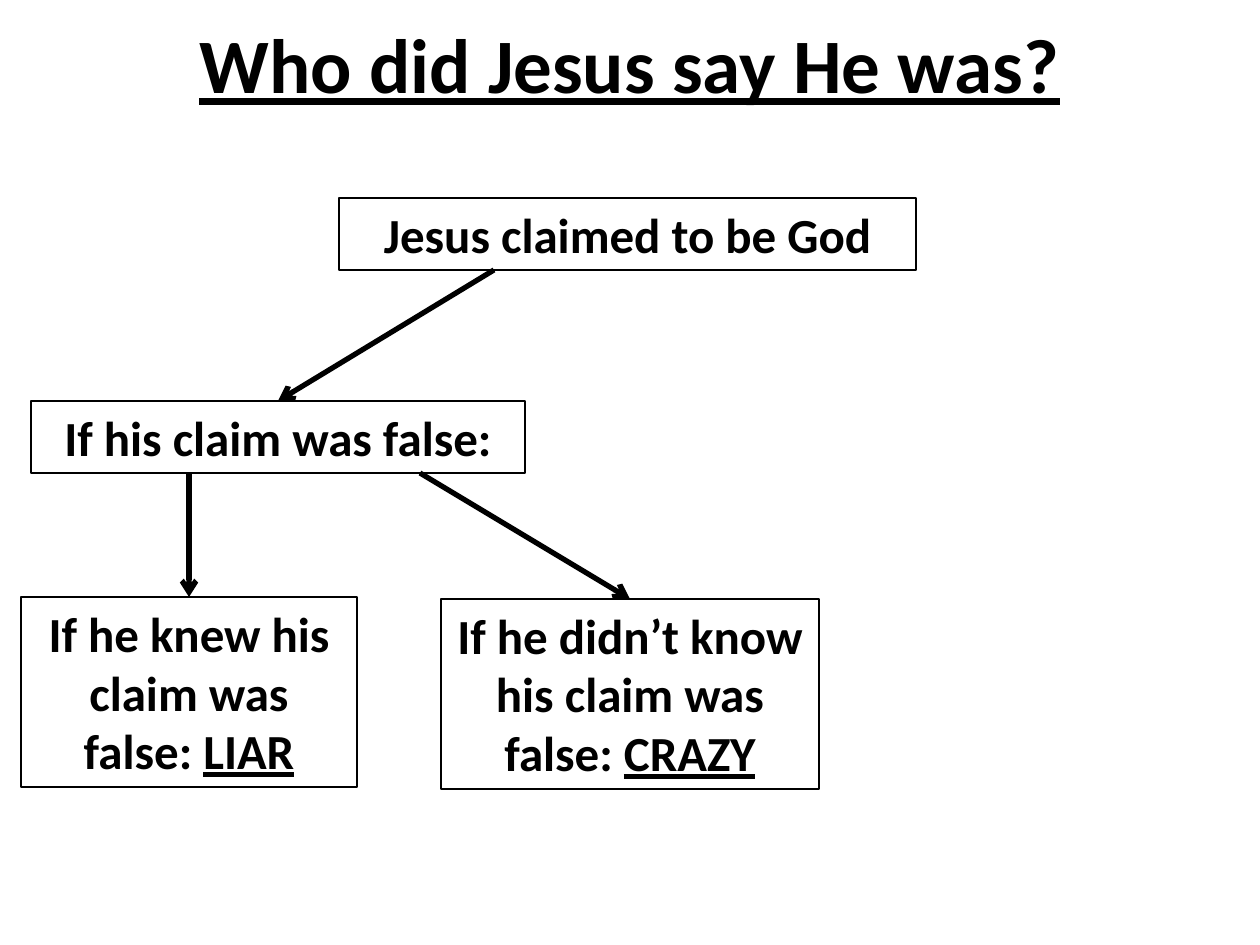
from dataclasses import dataclass

import lxml.etree
import pptx
import pptx.dml.color
import pptx.enum.shapes
import pptx.enum.text
import pptx.oxml.ns
import pptx.util

PIXELS_PER_INCH = 126
TOP_SIDE = 0


@dataclass(frozen=True)
class Theme:
    font: str = "Calibri"
    ink: pptx.dml.color.RGBColor = pptx.dml.color.RGBColor(0, 0, 0)
    title_size: int = 44
    box_size: int = 28
    border_width: float = 0.75
    arrow_width: float = 3


@dataclass(frozen=True)
class TextRun:
    text: str
    underline: bool = False


@dataclass(frozen=True)
class Box:
    left: int
    top: int
    width: int
    height: int
    runs: tuple[TextRun, ...]


@dataclass(frozen=True)
class Branch:
    start_x: int
    start_y: int
    box: Box


THEME = Theme()
TITLE = Box(63, 0, 1134, 126, (TextRun("Who did Jesus say He was?", True),))
CLAIM = Box(339, 198, 577, 72, (TextRun("Jesus claimed to be God"),))
FALSE_CLAIM = Box(31, 401, 494, 72, (TextRun("If his claim was false:"),))
LIAR = Box(21, 597, 336, 190, (
    TextRun("If he knew his claim was false: "), TextRun("LIAR", True)))
CRAZY = Box(441, 599, 378, 190, (
    TextRun("If he didn’t know his claim was false: "), TextRun("CRAZY", True)))
BRANCHES = (
    Branch(494, CLAIM.top + CLAIM.height, FALSE_CLAIM),
    Branch(189, FALSE_CLAIM.top + FALSE_CLAIM.height, LIAR),
    Branch(420, FALSE_CLAIM.top + FALSE_CLAIM.height, CRAZY),
)


def px(length: int) -> pptx.util.Emu:
    return pptx.util.Emu(round(length * 914400 / PIXELS_PER_INCH))


def place(box: Box) -> tuple[pptx.util.Emu, ...]:
    return px(box.left), px(box.top), px(box.width), px(box.height)


def write_text(shape, runs: tuple[TextRun, ...], size: int, anchor) -> None:
    frame = shape.text_frame
    frame.word_wrap = True
    frame.vertical_anchor = anchor
    paragraph = frame.paragraphs[0]
    paragraph.alignment = pptx.enum.text.PP_ALIGN.CENTER
    for item in runs:
        run = paragraph.add_run()
        run.text = item.text
        run.font.name = THEME.font
        run.font.size = pptx.util.Pt(size)
        run.font.bold = True
        run.font.underline = item.underline
        run.font.color.rgb = THEME.ink


def draw_title(shapes, box: Box) -> None:
    shape = shapes.add_textbox(*place(box))
    write_text(shape, box.runs, THEME.title_size, pptx.enum.text.MSO_ANCHOR.MIDDLE)


def draw_box(shapes, box: Box):
    shape = shapes.add_shape(pptx.enum.shapes.MSO_SHAPE.RECTANGLE, *place(box))
    shape.shadow.inherit = False
    shape.fill.background()
    shape.line.color.rgb = THEME.ink
    shape.line.width = pptx.util.Pt(THEME.border_width)
    write_text(shape, box.runs, THEME.box_size, pptx.enum.text.MSO_ANCHOR.TOP)
    return shape


def draw_branch(shapes, branch: Branch) -> None:
    group = shapes.add_group_shape()
    box = branch.box
    target = draw_box(group.shapes, box)
    connector = group.shapes.add_connector(
        pptx.enum.shapes.MSO_CONNECTOR.STRAIGHT,
        px(branch.start_x), px(branch.start_y),
        px(box.left + box.width // 2), px(box.top))
    connector.end_connect(target, TOP_SIDE)
    connector.line.color.rgb = THEME.ink
    connector.line.width = pptx.util.Pt(THEME.arrow_width)
    qualified = pptx.oxml.ns.qn
    lxml.etree.SubElement(
        connector.line._get_or_add_ln(), qualified("a:tailEnd"), type="arrow")
    lxml.etree.SubElement(
        connector._element.spPr, qualified("a:effectLst"))


def main() -> None:
    presentation = pptx.Presentation()
    presentation.slide_width = px(1260)
    presentation.slide_height = px(945)
    slide = presentation.slides.add_slide(presentation.slide_layouts[6])
    draw_title(slide.shapes, TITLE)
    draw_box(slide.shapes, CLAIM)
    for branch in BRANCHES:
        draw_branch(slide.shapes, branch)
    presentation.save("out.pptx")


if __name__ == "__main__":
    main()
